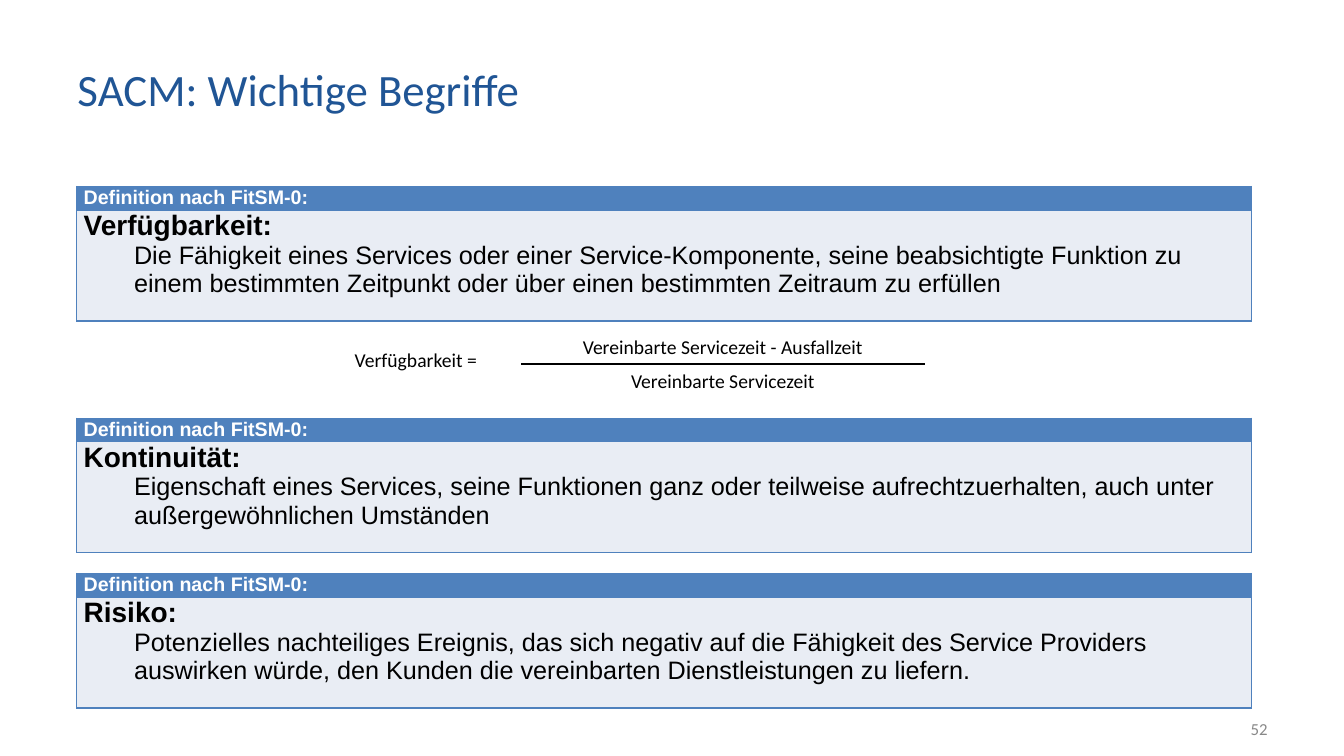
"""Build the slide with three service management definitions and the availability formula."""
from lxml import etree
from pptx import Presentation
from pptx.dml.color import RGBColor
from pptx.enum import shapes, text
from pptx.oxml import ns
from pptx.util import Inches, Pt

TITLE = "SACM: Wichtige Begriffe"
PAGE_NUMBER = "52"
HEADING = "Definition nach FitSM-0:"
DEFINITIONS = [
    (1.85, "Verfügbarkeit:",
     "Die Fähigkeit eines Services oder einer Service-Komponente, seine beabsichtigte Funktion zu "
     "einem bestimmten Zeitpunkt oder über einen bestimmten Zeitraum zu erfüllen"),
    (4.15, "Kontinuität:",
     "Eigenschaft eines Services, seine Funktionen ganz oder teilweise aufrechtzuerhalten, auch unter "
     "außergewöhnlichen Umständen"),
    (5.69, "Risiko:",
     "Potenzielles nachteiliges Ereignis, das sich negativ auf die Fähigkeit des Service Providers "
     "auswirken würde, den Kunden die vereinbarten Dienstleistungen zu liefern."),
]
FORMULA_NAME = "Verfügbarkeit ="
NUMERATOR = "Vereinbarte Servicezeit - Ausfallzeit"
DENOMINATOR = "Vereinbarte Servicezeit"

TITLE_BLUE = RGBColor(0x20, 0x55, 0x95)
TABLE_BLUE = RGBColor(0x4F, 0x81, 0xBD)
PALE_BLUE = RGBColor(0xE9, 0xED, 0xF4)
BLACK = RGBColor(0, 0, 0)
WHITE = RGBColor(255, 255, 255)
GREY = RGBColor(0x88, 0x88, 0x88)

TABLE_LEFT, TABLE_WIDTH = 0.76, 11.65
HEADING_HEIGHT, BODY_HEIGHT = 0.23, 1.1
FRACTION_LEFT, FRACTION_WIDTH, FRACTION_LINE = 5.17, 4, 3.61
LINE_HEIGHT = 0.34


def format_runs(paragraph, font_name, size, color, bold=False):
    for run in paragraph.runs:
        run.font.name = font_name
        run.font.size = Pt(size)
        run.font.color.rgb = color
        run.font.bold = bold


def add_text(slide, box, content, size, color, align=text.PP_ALIGN.LEFT, anchor=text.MSO_ANCHOR.TOP):
    shape = slide.shapes.add_textbox(*map(Inches, box))
    frame = shape.text_frame
    frame.word_wrap = True
    frame.vertical_anchor = anchor
    frame.text = content
    frame.paragraphs[0].alignment = align
    format_runs(frame.paragraphs[0], "Calibri", size, color)


def style_cell(cell, fill):
    cell.margin_left = cell.margin_right = Inches(0.07)
    cell.margin_top = cell.margin_bottom = 0
    cell.fill.solid()
    cell.fill.fore_color.rgb = fill
    properties = cell._tc.get_or_add_tcPr()
    for position, side in enumerate(("lnL", "lnR", "lnT", "lnB")):
        border = etree.Element(ns.qn("a:" + side), w=str(Pt(1)))
        solid = etree.SubElement(border, ns.qn("a:solidFill"))
        etree.SubElement(solid, ns.qn("a:srgbClr"), val=str(TABLE_BLUE))
        properties.insert(position, border)


def add_definition(slide, top, term, meaning):
    box = (TABLE_LEFT, top, TABLE_WIDTH, HEADING_HEIGHT + BODY_HEIGHT)
    table = slide.shapes.add_table(2, 1, *map(Inches, box)).table
    table.rows[0].height = Inches(HEADING_HEIGHT)
    table.rows[1].height = Inches(BODY_HEIGHT)
    heading, body = table.cell(0, 0), table.cell(1, 0)
    style_cell(heading, TABLE_BLUE)
    style_cell(body, PALE_BLUE)
    heading.text_frame.text = HEADING
    format_runs(heading.text_frame.paragraphs[0], "Arial", 14, WHITE, True)
    body.text_frame.text = term
    format_runs(body.text_frame.paragraphs[0], "Arial", 20, BLACK, True)
    paragraph = body.text_frame.add_paragraph()
    paragraph.text = meaning
    paragraph.level = 1
    paragraph_properties = paragraph._p.get_or_add_pPr()
    paragraph_properties.set("marL", str(Inches(0.5)))
    paragraph_properties.set("indent", "0")
    format_runs(paragraph, "Arial", 18, BLACK)


def add_formula(slide):
    add_text(slide, (3.42, 3.4, 1.9, LINE_HEIGHT), FORMULA_NAME, 14, BLACK)
    for top, content in ((FRACTION_LINE - LINE_HEIGHT, NUMERATOR), (FRACTION_LINE, DENOMINATOR)):
        add_text(slide, (FRACTION_LEFT, top, FRACTION_WIDTH, LINE_HEIGHT), content, 14, BLACK,
                 text.PP_ALIGN.CENTER)
    ends = (FRACTION_LEFT, FRACTION_LINE, FRACTION_LEFT + FRACTION_WIDTH, FRACTION_LINE)
    line = slide.shapes.add_connector(shapes.MSO_CONNECTOR.STRAIGHT, *map(Inches, ends))
    line.line.color.rgb = BLACK
    line.line.width = Pt(1.5)
    etree.SubElement(line._element.spPr, ns.qn("a:effectLst"))


def main():
    presentation = Presentation()
    presentation.slide_width = Inches(13.33)
    presentation.slide_height = Inches(7.5)
    slide = presentation.slides.add_slide(presentation.slide_layouts[6])
    add_text(slide, (0.67, 0.3, 9.91, 1.15), TITLE, 32, TITLE_BLUE, anchor=text.MSO_ANCHOR.MIDDLE)
    add_text(slide, (9.56, 7.03, 3.11, 0.4), PAGE_NUMBER, 12, GREY, text.PP_ALIGN.RIGHT,
             text.MSO_ANCHOR.MIDDLE)
    for top, term, meaning in DEFINITIONS:
        add_definition(slide, top, term, meaning)
    add_formula(slide)
    presentation.save("out.pptx")


if __name__ == "__main__":
    main()
